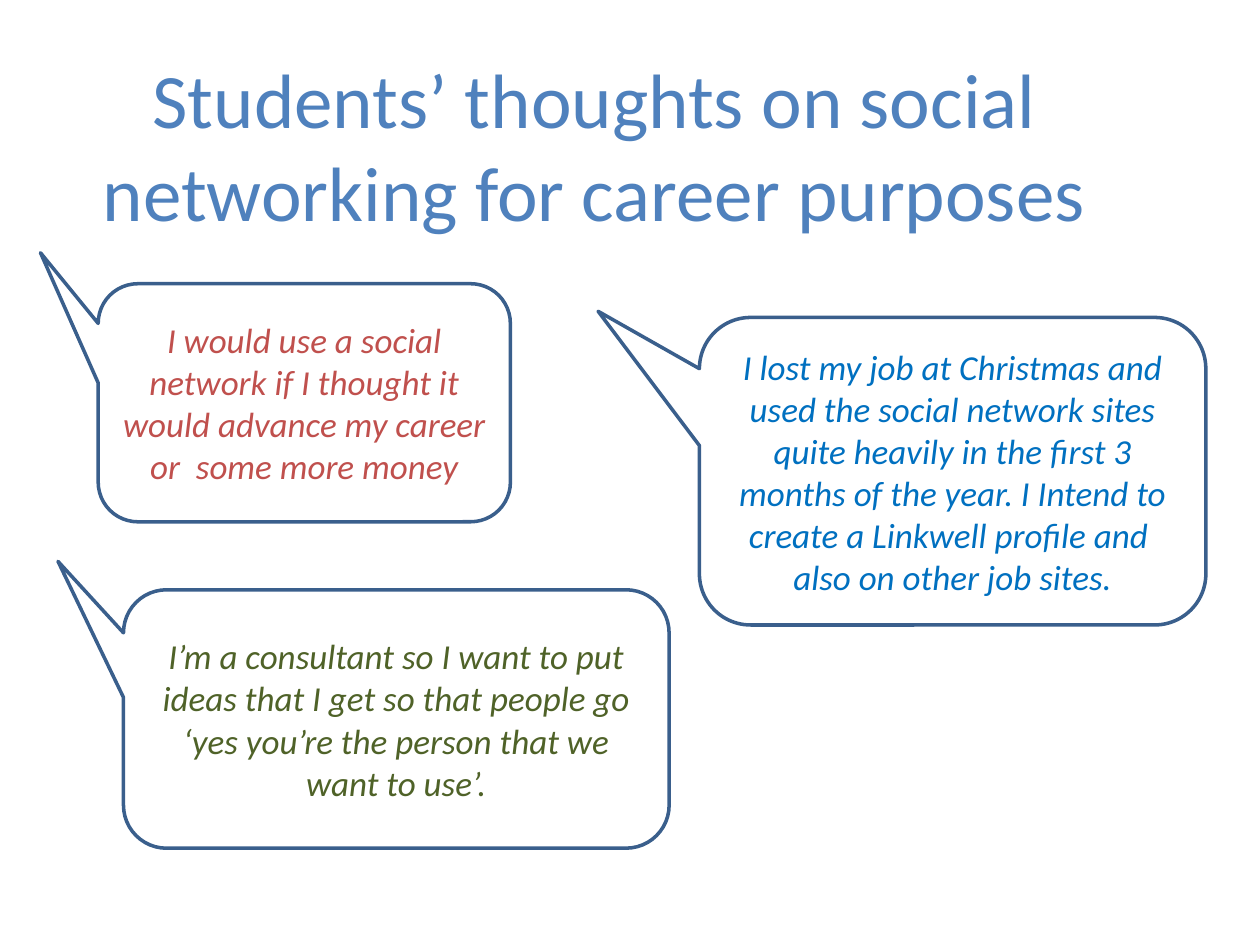
from dataclasses import dataclass

from pptx import Presentation
from pptx.dml.color import RGBColor
from pptx.enum.shapes import MSO_SHAPE
from pptx.enum.text import MSO_ANCHOR, PP_ALIGN
from pptx.util import Cm, Pt

BUBBLE = MSO_SHAPE.ROUNDED_RECTANGULAR_CALLOUT
MIDDLE = MSO_ANCHOR.MIDDLE
CENTER = PP_ALIGN.CENTER


@dataclass(frozen=True)
class Theme:
    font: str = "Calibri"
    title: str = "4F81BD"
    edge: str = "3A5F8C"
    red: str = "C0504D"
    blue: str = "0070C0"
    green: str = "4F6228"
    large: int = 44
    body: int = 20
    line: int = 2


THEME = Theme()

# Place (left, top, width, height) in cm, pointer tip, colour, words
QUOTES = [
    ((1.98, 5.72, 8.31, 4.8), (-0.64, -0.63), THEME.red,
     "I would use a social network if I thought it would advance "
     "my career or  some more money"),
    ((14.1, 6.4, 10.21, 6.2), (-0.7, -0.52), THEME.blue,
     "I lost my job at Christmas and used the social network sites quite "
     "heavily in the first 3 months of the year. I Intend to create a "
     "Linkwell profile and  also on other job sites."),
    ((2.49, 11.89, 11, 5.21), (-0.62, -0.61), THEME.green,
     "I’m a consultant so I want to put ideas that I get so that people go "
     "‘yes you’re the person that we want to use’."),
]


def assign(item, values):
    for name, value in values.items():
        setattr(item, name, value)


def write(shape, words, size, color, italic=False):
    frame = shape.text_frame
    assign(frame, {"word_wrap": True, "vertical_anchor": MIDDLE})
    para = frame.paragraphs[0]
    para.alignment = CENTER
    run = para.add_run()
    run.text = words
    assign(run.font, {"name": THEME.font, "size": Pt(size), "italic": italic})
    run.font.color.rgb = RGBColor.from_string(color)


def add_title(slide, place, words):
    box = slide.shapes.add_textbox(*map(Cm, place))
    write(box, words, THEME.large, THEME.title)


def add_quote(slide, place, tip, color, words):
    shape = slide.shapes.add_shape(BUBBLE, *map(Cm, place))
    shape.shadow.inherit = False
    shape.adjustments[0], shape.adjustments[1] = tip
    shape.fill.background()
    shape.line.color.rgb = RGBColor.from_string(THEME.edge)
    shape.line.width = Pt(THEME.line)
    write(shape, words, THEME.body, color, italic=True)


def main():
    deck = Presentation()
    assign(deck, {"slide_width": Cm(25.4), "slide_height": Cm(19.05)})
    slide = deck.slides.add_slide(deck.slide_layouts[6])

    # Heading
    add_title(slide, (1.09, 1.32, 21.79, 3.18),
              "Students’ thoughts on social networking for career purposes")

    # Speech bubbles
    for quote in QUOTES:
        add_quote(slide, *quote)

    deck.save("out.pptx")


if __name__ == "__main__":
    main()
